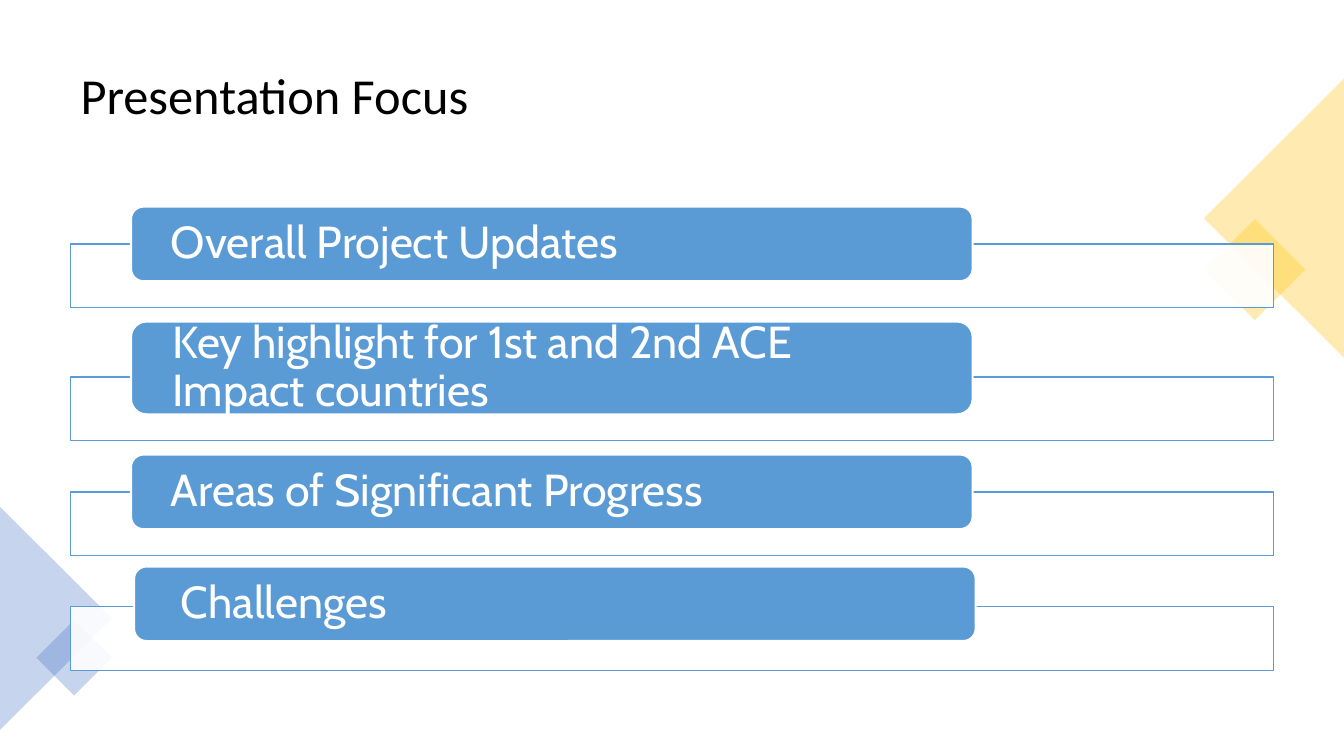
from lxml.etree import SubElement
from pptx import Presentation
from pptx.dml.color import RGBColor
from pptx.enum.shapes import MSO_SHAPE as Shape
from pptx.enum.text import MSO_ANCHOR as Anchor, PP_ALIGN as Align
from pptx.oxml.ns import qn
from pptx.util import Inches, Pt

WIDTH, HEIGHT = Inches(13.33), Inches(7.5)
COL, ROW = WIDTH / 120, HEIGHT / 75

COLORS = {"white": "FFFFFF", "black": "000000", "blue": "5B9BD5",
          "gold": "FFC000", "indigo": "4472C4"}

MARGIN, CONTENT = 6.3, 107.4        # columns
FRAME_H, OVERLAP, GAP = 6.3, 3.7, 4  # rows
FIRST_FRAME = 24.2

# label, bar height in rows, bar shift in columns and rows, left inset
TOPICS = [
    ("Overall Project Updates", 7.4, (0, 0), 0.36),
    ("Key highlight for 1st and 2nd ACE Impact countries", 9.2, (0, 0), 0.37),
    ("Areas of Significant Progress", 7.4, (0, 0), 0.36),
    ("Challenges", 7.4, (0.27, -0.3), 0.43),
]

# preset, grid box, rotation, colour
DECOR = [
    (Shape.RECTANGLE, (108.84, 23.2, 6.39, 7.1), 45, "gold"),
    (Shape.ISOSCELES_TRIANGLE, (101.28, 14.7, 24.94, 13.9), 270, "gold"),
    (Shape.ISOSCELES_TRIANGLE, (-4.95, 55.8, 19.9, 11.1), 90, "indigo"),
    (Shape.RECTANGLE, (4.23, 62.6, 4.77, 5.3), 45, "indigo"),
]


def rgb(name):
    return RGBColor.from_string(COLORS[name])


def grid(left, top, width, height):
    """Turn columns and rows into slide lengths."""
    return int(left * COL), int(top * ROW), int(width * COL), int(height * ROW)


def add_block(s, preset, box, fill, opacity=100, line=None, line_width=1):
    sp = s.shapes.add_shape(preset, *grid(*box))
    sp.shadow.inherit = False
    sp.fill.solid()
    sp.fill.fore_color.rgb = rgb(fill)
    if opacity < 100:
        color = sp.fill._xPr.find(qn("a:solidFill"))[0]
        SubElement(color, qn("a:alpha"), val=str(opacity * 1000))
    if line:
        sp.line.color.rgb = rgb(line)
        sp.line.width = Pt(line_width)
    else:
        sp.line.fill.background()
    return sp


def write(sp, text, size, font, color, insets):
    tf = sp.text_frame
    tf.word_wrap = True
    tf.vertical_anchor = Anchor.MIDDLE
    tf.margin_left, tf.margin_top, tf.margin_right, tf.margin_bottom = map(Inches, insets)
    p = tf.paragraphs[0]
    p.text = text
    p.alignment = Align.LEFT
    p.line_spacing = 0.9
    p.font.size = Pt(size)
    p.font.name = font
    p.font.color.rgb = rgb(color)


def add_title(s, text):
    sp = s.shapes.add_textbox(*grid(MARGIN, 3.5, CONTENT, 12.4))
    write(sp, text, 36, "Calibri", "black", (0.1, 0.05, 0.1, 0.05))


def add_topic(s, frame_top, label, bar_height, shift, inset):
    """Draw an outlined frame with a labelled bar across its top edge."""
    add_block(s, Shape.RECTANGLE, (MARGIN, frame_top, CONTENT, FRAME_H),
              "white", 90, "blue")
    dx, dy = shift
    bar_top = frame_top + OVERLAP - bar_height + dy
    bar = add_block(s, Shape.ROUNDED_RECTANGLE,
                    (11.7 + dx, bar_top, 75.15, bar_height),
                    "blue", line="white", line_width=1.5)
    write(bar, label, 32, "Cabin", "white", (inset, 0, 0.36, 0))


def main():
    prs = Presentation()
    prs.slide_width, prs.slide_height = WIDTH, HEIGHT
    s = prs.slides.add_slide(prs.slide_layouts[6])
    add_title(s, "Presentation Focus")
    for preset, box, rotation, color in DECOR:
        add_block(s, preset, box, color, 30).rotation = rotation
    frame_top = FIRST_FRAME
    for label, bar_height, shift, inset in TOPICS:
        if label != TOPICS[0][0]:
            frame_top += bar_height + GAP
        add_topic(s, frame_top, label, bar_height, shift, inset)
    prs.save("out.pptx")


if __name__ == "__main__":
    main()
